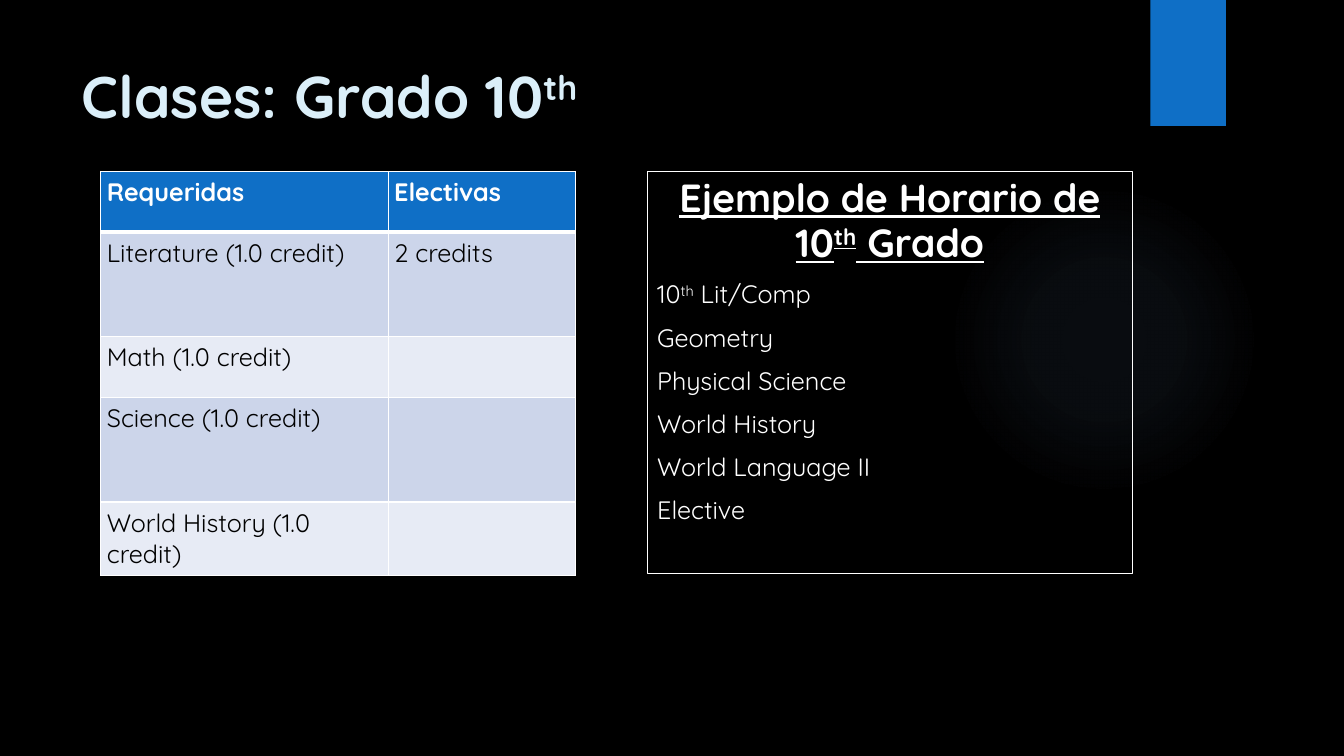
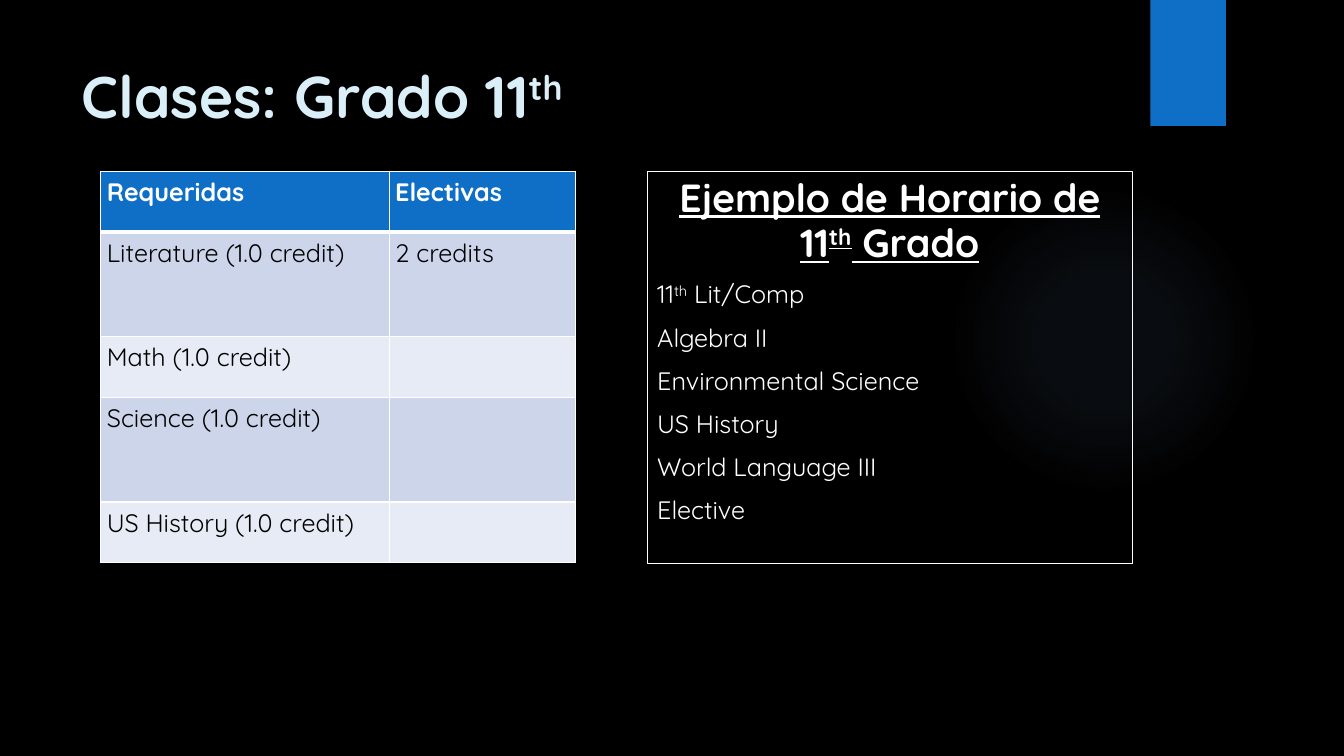
import dataclasses

import pptx
import pptx.dml.color
import pptx.enum.shapes
import pptx.enum.text
import pptx.oxml
import pptx.oxml.ns
import pptx.util

Inches = pptx.util.Inches
Pt = pptx.util.Pt
SHAPES = pptx.enum.shapes.MSO_SHAPE
ANCHOR = pptx.enum.text.MSO_ANCHOR
ALIGN = pptx.enum.text.PP_ALIGN


@dataclasses.dataclass(frozen=True)
class Theme:
    font: str = "Quicksand"
    background: str = "000000"
    accent: str = "0F6FC6"
    glow: str = "82B1E5"
    title: str = "DBEFF9"
    light: str = "FFFFFF"
    dark: str = "000000"
    row_bands: tuple = ("CCD5EA", "E7EBF5")
    title_size: int = 42
    heading_size: int = 28
    body_size: int = 18


@dataclasses.dataclass(frozen=True)
class Grade:
    ordinal: str
    history: str
    courses: tuple
    required_width: float
    panel_height: float


THEME = Theme()
CONTENT_TOP = 1.7
TABLE_WIDTH = 4.71
ROW_HEIGHTS = (0.6, 1.04, 0.6, 1.04, 0.6)

# Text between ^ marks is set as superscript
GRADES = (
    Grade("10^th^", "World History",
          ("Geometry", "Physical Science", "World History", "World Language II"),
          2.85, 3.99),
    Grade("11^th^", "US History",
          ("Algebra II", "Environmental Science", "US History", "World Language III"),
          2.86, 3.89),
)


def rgb(color):
    return pptx.dml.color.RGBColor.from_string(color)


def paint(target, color):
    target.fill.solid()
    target.fill.fore_color.rgb = rgb(color)


def write(paragraph, text, size, color, bold=False, underline=False):
    for index, piece in enumerate(text.split("^")):
        if not piece:
            continue
        run = paragraph.add_run()
        run.text = piece
        run.font.name = THEME.font
        run.font.size = Pt(size)
        run.font.bold = bold
        run.font.underline = underline
        run.font.color.rgb = rgb(color)
        if index % 2:
            run.font._element.set("baseline", "30000")


def add_plain_shape(slide, kind, left, top, width, height):
    shape = slide.shapes.add_shape(
        kind, Inches(left), Inches(top), Inches(width), Inches(height))
    shape.shadow.inherit = False
    shape.fill.background()
    shape.line.fill.background()
    return shape


# Shared backdrop: black ground, soft glow and corner tab
def add_backdrop(slide):
    paint(slide.background, THEME.background)
    glow = add_plain_shape(slide, SHAPES.OVAL, 9.41, 1.83, 3.08, 3.08)
    stops = "".join(
        f'<a:gs pos="{position * 1000}"><a:srgbClr val="{THEME.glow}">'
        f'<a:alpha val="{opacity * 1000}"/></a:srgbClr></a:gs>'
        for position, opacity in ((0, 7), (36, 6), (69, 0), (100, 0)))
    gradient = pptx.oxml.parse_xml(
        f'<a:gradFill {pptx.oxml.ns.nsdecls("a")}><a:gsLst>{stops}</a:gsLst>'
        '<a:path path="circle"><a:fillToRect l="50000" t="50000" r="50000" b="50000"/>'
        '</a:path></a:gradFill>')
    properties = glow._element.spPr
    properties.replace(properties.find(pptx.oxml.ns.qn("a:noFill")), gradient)
    paint(add_plain_shape(slide, SHAPES.RECTANGLE, 11.41, 0, 0.75, 1.25), THEME.accent)


def add_title(slide, text):
    box = slide.shapes.add_textbox(Inches(0.71), Inches(0.5), Inches(10.29), Inches(0.88))
    box.text_frame.word_wrap = True
    box.text_frame.vertical_anchor = ANCHOR.MIDDLE
    write(box.text_frame.paragraphs[0], text, THEME.title_size, THEME.title, bold=True)


def set_borders(cell, top, bottom):
    properties = cell._tc.get_or_add_tcPr()
    widths = (("lnL", 1), ("lnR", 1), ("lnT", top), ("lnB", bottom))
    for index, (side, width) in enumerate(widths):
        properties.insert(index, pptx.oxml.parse_xml(
            f'<a:{side} {pptx.oxml.ns.nsdecls("a")} w="{Pt(width)}"><a:solidFill>'
            f'<a:srgbClr val="{THEME.light}"/></a:solidFill></a:{side}>'))


# Required and elective classes
def add_credit_table(slide, grade):
    rows = (
        ("Requeridas", "Electivas"),
        ("Literature (1.0 credit)", "2 credits"),
        ("Math (1.0 credit)", ""),
        ("Science (1.0 credit)", ""),
        (f"{grade.history} (1.0 credit)", ""),
    )
    table = slide.shapes.add_table(
        len(rows), 2, Inches(1), Inches(CONTENT_TOP),
        Inches(TABLE_WIDTH), Inches(sum(ROW_HEIGHTS))).table
    table.columns[0].width = Inches(grade.required_width)
    table.columns[1].width = Inches(TABLE_WIDTH - grade.required_width)
    for r, (labels, height) in enumerate(zip(rows, ROW_HEIGHTS)):
        table.rows[r].height = Inches(height)
        header = r == 0
        for c, label in enumerate(labels):
            cell = table.cell(r, c)
            cell.margin_left = cell.margin_right = Inches(0.06)
            cell.margin_top = cell.margin_bottom = Inches(0.05)
            paint(cell, THEME.accent if header else THEME.row_bands[(r - 1) % 2])
            set_borders(cell, top=3 if r == 1 else 1, bottom=3 if header else 1)
            write(cell.text_frame.paragraphs[0], label, THEME.body_size,
                  THEME.light if header else THEME.dark, bold=header)


# Sample timetable in an outlined panel
def add_schedule(slide, grade):
    panel = add_plain_shape(
        slide, SHAPES.RECTANGLE, 6.42, CONTENT_TOP, 4.81, grade.panel_height)
    panel.line.color.rgb = rgb(THEME.light)
    panel.line.width = Pt(0.75)
    frame = panel.text_frame
    frame.word_wrap = True
    frame.vertical_anchor = ANCHOR.TOP
    heading = frame.paragraphs[0]
    heading.alignment = ALIGN.CENTER
    heading.line_spacing = 0.96
    write(heading, f"Ejemplo de Horario de {grade.ordinal} Grado",
          THEME.heading_size, THEME.light, bold=True, underline=True)
    for course in (f"{grade.ordinal} Lit/Comp", *grade.courses, "Elective"):
        entry = frame.add_paragraph()
        entry.alignment = ALIGN.LEFT
        entry.line_spacing = 0.96
        entry.space_before = Pt(10)
        write(entry, course, THEME.body_size, THEME.light)


def main():
    deck = pptx.Presentation()
    deck.slide_width, deck.slide_height = Inches(13.33), Inches(7.5)
    for grade in GRADES:
        slide = deck.slides.add_slide(deck.slide_layouts[6])
        add_backdrop(slide)
        add_credit_table(slide, grade)
        add_schedule(slide, grade)
        add_title(slide, f"Clases: Grado {grade.ordinal}")
    deck.save("out.pptx")


if __name__ == "__main__":
    main()
